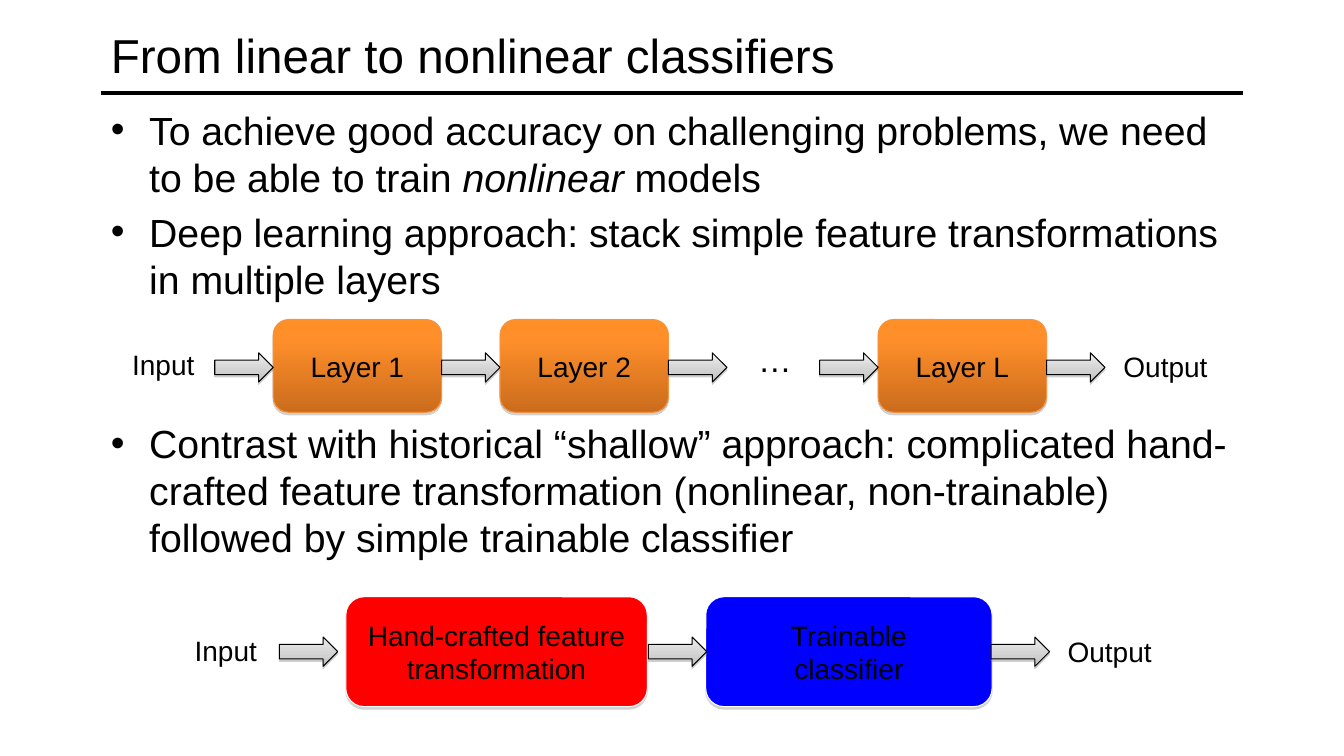
import dataclasses
import typing

import lxml.etree
import pptx
import pptx.dml.color
import pptx.enum.shapes
import pptx.enum.text
import pptx.oxml.ns
import pptx.util

Inches = pptx.util.Inches
Pt = pptx.util.Pt
SHAPE = pptx.enum.shapes.MSO_SHAPE
ALIGN = pptx.enum.text.PP_ALIGN
ANCHOR = pptx.enum.text.MSO_ANCHOR

HEX = {
    "black": "000000", "white": "FFFFFF", "red": "FF0000", "blue": "0000FF",
    "shade": "808080", "rim": "F69240",
    "amber": "FF8F26", "orange": "FF8F2A", "rust": "CB6C1D",
    "pale": "EDEDED", "silver": "D0D0D0", "grey": "BCBCBC",
}
LAYER = ((0, "amber"), (20, "orange"), (100, "rust"))
METAL = ((0, "pale"), (65, "silver"), (100, "grey"))
WIDE, STEP, ARROW = 1.67, 2.25, 0.58
FIRST, LAST = 2.71, 8.71


@dataclasses.dataclass
class Block:
    """A filled shape with a soft shadow, and text if any."""
    left: float
    top: float
    width: float
    height: float
    fill: typing.Any
    line: str
    text: str = ""
    kind: typing.Any = SHAPE.ROUNDED_RECTANGLE
    alpha: int = 35
    drop: float = 1.8


@dataclasses.dataclass
class Label:
    """A line of plain text."""
    left: float
    top: float
    width: float
    height: float
    text: str
    size: float = 20
    align: typing.Any = ALIGN.CENTER


def tint(name: str) -> pptx.dml.color.RGBColor:
    """Give the named colour."""
    return pptx.dml.color.RGBColor.from_string(HEX[name])


def node(root: typing.Any, tag: str, **attrs: typing.Any) -> typing.Any:
    """Add a drawing element under root."""
    texts = {key: str(value) for key, value in attrs.items()}
    return lxml.etree.SubElement(root, pptx.oxml.ns.qn("a:" + tag), texts)


def write(frame: typing.Any, text: str, *, size: float = 20,
          align: typing.Any = ALIGN.CENTER, anchor: typing.Any = ANCHOR.MIDDLE,
          before: float = 0, bullet: bool = False) -> None:
    """Add a paragraph, with parts between asterisks in italics."""
    frame.word_wrap = True
    frame.auto_size = pptx.enum.text.MSO_AUTO_SIZE.NONE
    frame.vertical_anchor = anchor
    par = frame.paragraphs[0]
    if par.runs:
        par = frame.add_paragraph()
    par.alignment = align
    par.space_before = Pt(before)
    if bullet:
        props = par._p.get_or_add_pPr()
        props.set("marL", str(Inches(0.38)))
        props.set("indent", str(-Inches(0.38)))
        node(props, "buChar", char="•")
    for part, chunk in enumerate(text.split("*")):
        for row, line in enumerate(chunk.split("\n")):
            if row:
                par.add_line_break()
            run = par.add_run()
            run.text = line
            run.font.name = "Arial"
            run.font.size = Pt(size)
            run.font.italic = part % 2 == 1
            run.font.color.rgb = tint("black")


def place(item: typing.Any, left: float, top: float, width: float, height: float) -> None:
    """Move and size a placeholder."""
    item.left, item.top = Inches(left), Inches(top)
    item.width, item.height = Inches(width), Inches(height)


def blend(shape: typing.Any, stops: typing.Any) -> None:
    """Fill a shape from top to bottom through the stops."""
    shape.fill.gradient()
    shape.fill.gradient_angle = 270
    chain = shape.element.spPr.find(".//" + pptx.oxml.ns.qn("a:gsLst"))
    for stop in list(chain):
        chain.remove(stop)
    for spot, name in stops:
        node(node(chain, "gs", pos=spot * 1000), "srgbClr", val=HEX[name])


def draw(shapes: typing.Any, block: Block) -> None:
    """Draw a block."""
    shape = shapes.add_shape(block.kind, Inches(block.left), Inches(block.top),
                             Inches(block.width), Inches(block.height))
    if isinstance(block.fill, str):
        shape.fill.solid()
        shape.fill.fore_color.rgb = tint(block.fill)
    else:
        blend(shape, block.fill)
    shape.line.color.rgb = tint(block.line)
    shape.line.width = Pt(0.75)
    shape.shadow.inherit = False
    effects = shape.element.spPr.find(pptx.oxml.ns.qn("a:effectLst"))
    cast = node(effects, "outerShdw", blurRad=0, dist=Pt(block.drop),
                dir=90 * 60000, rotWithShape=0)
    node(node(cast, "srgbClr", val=HEX["shade"]), "alpha", val=block.alpha * 1000)
    if block.text:
        write(shape.text_frame, block.text)


def note(shapes: typing.Any, label: Label) -> None:
    """Draw a label."""
    box = shapes.add_textbox(Inches(label.left), Inches(label.top),
                             Inches(label.width), Inches(label.height))
    write(box.text_frame, label.text, size=label.size, align=label.align,
          anchor=ANCHOR.TOP)


def main() -> None:
    """Build the slide and save it."""
    deck = pptx.Presentation()
    deck.slide_width, deck.slide_height = Inches(13.33), Inches(7.5)
    slide = deck.slides.add_slide(deck.slide_layouts[1])
    shapes = slide.shapes

    title, body = shapes.title, slide.placeholders[1]
    place(title, 1, 0.08, 11.33, 0.92)
    write(title.text_frame, "From linear to nonlinear classifiers", size=34,
          align=ALIGN.LEFT)
    place(body, 1, 1, 11.33, 5.75)
    points = (
        (0, "To achieve good accuracy on challenging problems, we need to be able "
            "to train *nonlinear* models"),
        (5.6, "Deep learning approach: stack simple feature transformations in "
              "multiple layers"),
        (84, "Contrast with historical “shallow” approach: complicated hand-crafted "
             "feature transformation (nonlinear, non-trainable) followed by simple "
             "trainable classifier"),
    )
    for before, text in points:
        write(body.text_frame, text, size=28, align=ALIGN.LEFT, anchor=ANCHOR.TOP,
              before=before, bullet=True)

    rule = shapes.add_connector(pptx.enum.shapes.MSO_CONNECTOR.STRAIGHT,
                                Inches(1), Inches(0.92), Inches(12.33), Inches(0.92))
    rule.line.color.rgb = tint("black")
    rule.line.width = Pt(3)
    node(rule.element.spPr, "effectLst")

    layers = ((FIRST, "Layer 1"), (FIRST + STEP, "Layer 2"), (LAST, "Layer L"))
    blocks = [Block(left, 3.17, WIDE, 0.92, LAYER, "rim", text)
              for left, text in layers]
    blocks += [
        Block(3.43, 5.92, 2.99, 1.09, "red", "white", "Hand-crafted feature transformation"),
        Block(7, 5.92, 2.84, 1.09, "blue", "white", "Trainable\nclassifier"),
    ]
    spots = [(left + WIDE, 3.5) for left, _ in layers]
    spots += [(left - ARROW, 3.5) for left in (FIRST, LAST)]
    spots += [(left, 6.32) for left in (2.77, 6.43, 9.83)]
    blocks += [Block(left, top, ARROW, 0.29, METAL, "black", kind=SHAPE.RIGHT_ARROW,
                     alpha=38, drop=1.6) for left, top in spots]
    for block in blocks:
        draw(shapes, block)

    labels = (
        Label(1, 3.4, 1.24, 0.44, "Input"),
        Label(7.42, 3.31, 0.54, 0.5, "…", 24, ALIGN.LEFT),
        Label(11.04, 3.42, 1.04, 0.44, "Output"),
        Label(1.46, 6.24, 1.56, 0.44, "Input"),
        Label(10.49, 6.25, 1.34, 0.44, "Output", align=ALIGN.LEFT),
    )
    for label in labels:
        note(shapes, label)
    deck.save("out.pptx")


if __name__ == "__main__":
    main()
